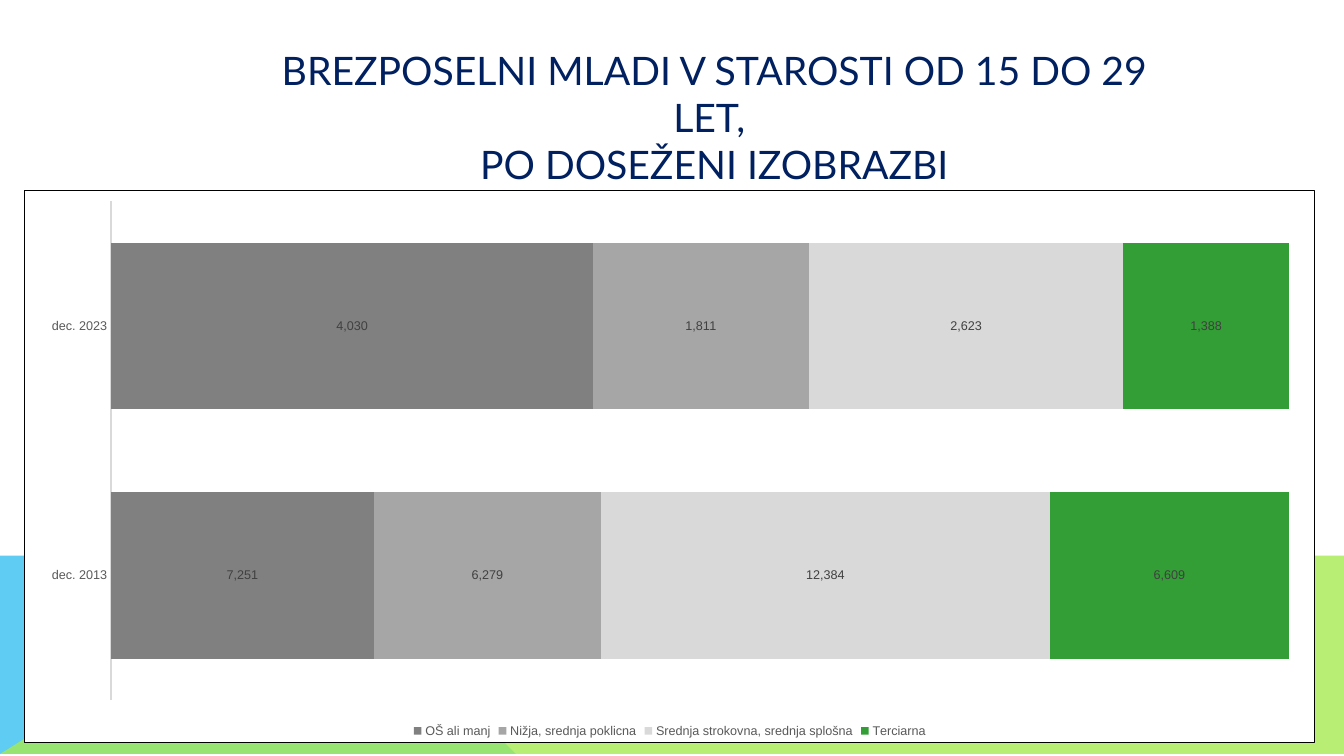
from dataclasses import dataclass

from lxml.etree import fromstring, SubElement
from pptx import Presentation
from pptx.chart.chart import Chart
from pptx.chart.data import CategoryChartData
from pptx.dml.color import RGBColor
from pptx.enum.chart import XL_CHART_TYPE, XL_LABEL_POSITION, XL_LEGEND_POSITION, XL_TICK_LABEL_POSITION, XL_TICK_MARK
from pptx.enum.text import MSO_ANCHOR, MSO_AUTO_SIZE, PP_ALIGN
from pptx.oxml.ns import nsdecls, qn
from pptx.slide import Slide
from pptx.text.text import Font
from pptx.util import Cm, Pt

NAVY = RGBColor(0x00, 0x20, 0x60)
BLUE = RGBColor(0x5E, 0xCC, 0xF3)
LIME = RGBColor(0xA7, 0xEA, 0x52)
BLACK = RGBColor(0x00, 0x00, 0x00)
LABEL_GRAY = RGBColor(0x40, 0x40, 0x40)
AXIS_GRAY = RGBColor(0x59, 0x59, 0x59)
DARK_GRAY = RGBColor(0x80, 0x80, 0x80)
MID_GRAY = RGBColor(0xA6, 0xA6, 0xA6)
LIGHT_GRAY = RGBColor(0xD9, 0xD9, 0xD9)
GREEN = RGBColor(0x33, 0x9E, 0x35)


@dataclass
class Band:
    points: list[tuple[float, float]]
    color: RGBColor
    opacity: int = 100


@dataclass
class Education:
    name: str
    values: tuple[int, int]
    color: RGBColor


BANDS = [
    Band([(0, 19.05), (0, 14.02), (7.57, 14.02), (13.23, 19.05)], BLUE),
    Band([(0, 19.05), (7.54, 14.02), (33.87, 14.04), (33.87, 19.05)], LIME, 80),
]
MONTHS = ["dec. 2013", "dec. 2023"]
LEVELS = [
    Education("OŠ ali manj", (7251, 4030), DARK_GRAY),
    Education("Nižja, srednja poklicna", (6279, 1811), MID_GRAY),
    Education("Srednja strokovna, srednja splošna", (12384, 2623), LIGHT_GRAY),
    Education("Terciarna", (6609, 1388), GREEN),
]
TITLE_LINES = ["BREZPOSELNI MLADI V STAROSTI OD 15 DO 29 LET, ", "PO DOSEŽENI IZOBRAZBI"]


def set_font(font: Font, name: str, size: float, color: RGBColor) -> None:
    font.name = name
    font.size = Pt(size)
    font.bold = False
    font.color.rgb = color


def draw_band(page: Slide, band: Band) -> None:
    builder = page.shapes.build_freeform(*band.points[0], scale=Cm(1))
    builder.add_line_segments(band.points[1:], close=True)
    shape = builder.convert_to_shape()
    shape.shadow.inherit = False
    shape.fill.solid()
    shape.fill.fore_color.rgb = band.color
    shape.line.fill.background()
    if band.opacity < 100:
        color = shape._element.spPr.find(qn("a:solidFill"))[0]
        SubElement(color, qn("a:alpha")).set("val", str(band.opacity * 1000))


def write_title(page: Slide) -> None:
    title = page.shapes.title
    title.left, title.top, title.width, title.height = Cm(5.92), Cm(1.45), Cm(24.16), Cm(2.97)
    frame = title.text_frame
    frame.text = "\n".join(TITLE_LINES)
    frame.word_wrap = True
    frame.auto_size = MSO_AUTO_SIZE.NONE
    frame.vertical_anchor = MSO_ANCHOR.MIDDLE
    for para in frame.paragraphs:
        para.alignment = PP_ALIGN.CENTER
        set_font(para.font, "Lato", 28, NAVY)


def frame_chart(chart: Chart) -> None:
    border = fromstring(
        f'<c:spPr {nsdecls("c", "a")}><a:solidFill><a:srgbClr val="FFFFFF"/></a:solidFill>'
        f'<a:ln w="{Pt(0.75)}"><a:solidFill><a:srgbClr val="{BLACK}"/></a:solidFill></a:ln></c:spPr>'
    )
    chart._chartSpace.find(qn("c:chart")).addnext(border)
    plot_area = chart._chartSpace.find(".//" + qn("c:plotArea"))
    for old in plot_area.findall(qn("c:layout")):
        plot_area.remove(old)
    layout = fromstring(f'<c:layout {nsdecls("c")}><c:manualLayout/></c:layout>')
    settings = {"layoutTarget": "inner", "xMode": "edge", "yMode": "edge",
                "x": 0.067, "y": 0.02, "w": 0.913, "h": 0.904}
    for tag, value in settings.items():
        SubElement(layout[0], qn(f"c:{tag}")).set("val", str(value))
    plot_area.insert(0, layout)


def draw_chart(page: Slide) -> None:
    data = CategoryChartData(number_format="#,##0")
    data.categories = MONTHS
    for level in LEVELS:
        data.add_series(level.name, level.values)
    chart = page.shapes.add_chart(
        XL_CHART_TYPE.BAR_STACKED_100, Cm(0.61), Cm(4.78), Cm(32.54), Cm(13.94), data
    ).chart
    set_font(chart.font, "Arial", 10, BLACK)
    chart.has_title = False
    frame_chart(chart)

    chart.has_legend = True
    chart.legend.position = XL_LEGEND_POSITION.BOTTOM
    chart.legend.include_in_layout = False
    set_font(chart.legend.font, "Arial", 9, AXIS_GRAY)

    for axis in (chart.category_axis, chart.value_axis):
        axis.has_major_gridlines = False
        axis.major_tick_mark = axis.minor_tick_mark = XL_TICK_MARK.NONE
        set_font(axis.tick_labels.font, "Arial", 9, AXIS_GRAY)
    chart.category_axis.format.line.color.rgb = LIGHT_GRAY
    chart.category_axis.format.line.width = Pt(1.5)
    chart.value_axis.tick_label_position = XL_TICK_LABEL_POSITION.NONE
    chart.value_axis.format.line.fill.background()

    plot = chart.plots[0]
    plot.gap_width = 50
    plot.overlap = 100
    plot.vary_by_categories = False
    for series, level in zip(plot.series, LEVELS):
        series.format.fill.solid()
        series.format.fill.fore_color.rgb = level.color
        labels = series.data_labels
        labels.show_value = True
        labels.position = XL_LABEL_POSITION.CENTER
        labels.number_format = "#,##0"
        labels.number_format_is_linked = False
        set_font(labels.font, "Arial", 9, LABEL_GRAY)


def main() -> None:
    deck = Presentation()
    deck.slide_width, deck.slide_height = Cm(33.87), Cm(19.05)
    page = deck.slides.add_slide(deck.slide_layouts.get_by_name("Title Only"))
    for band in BANDS:
        draw_band(page, band)
    write_title(page)
    draw_chart(page)
    deck.save("out.pptx")


if __name__ == "__main__":
    main()
